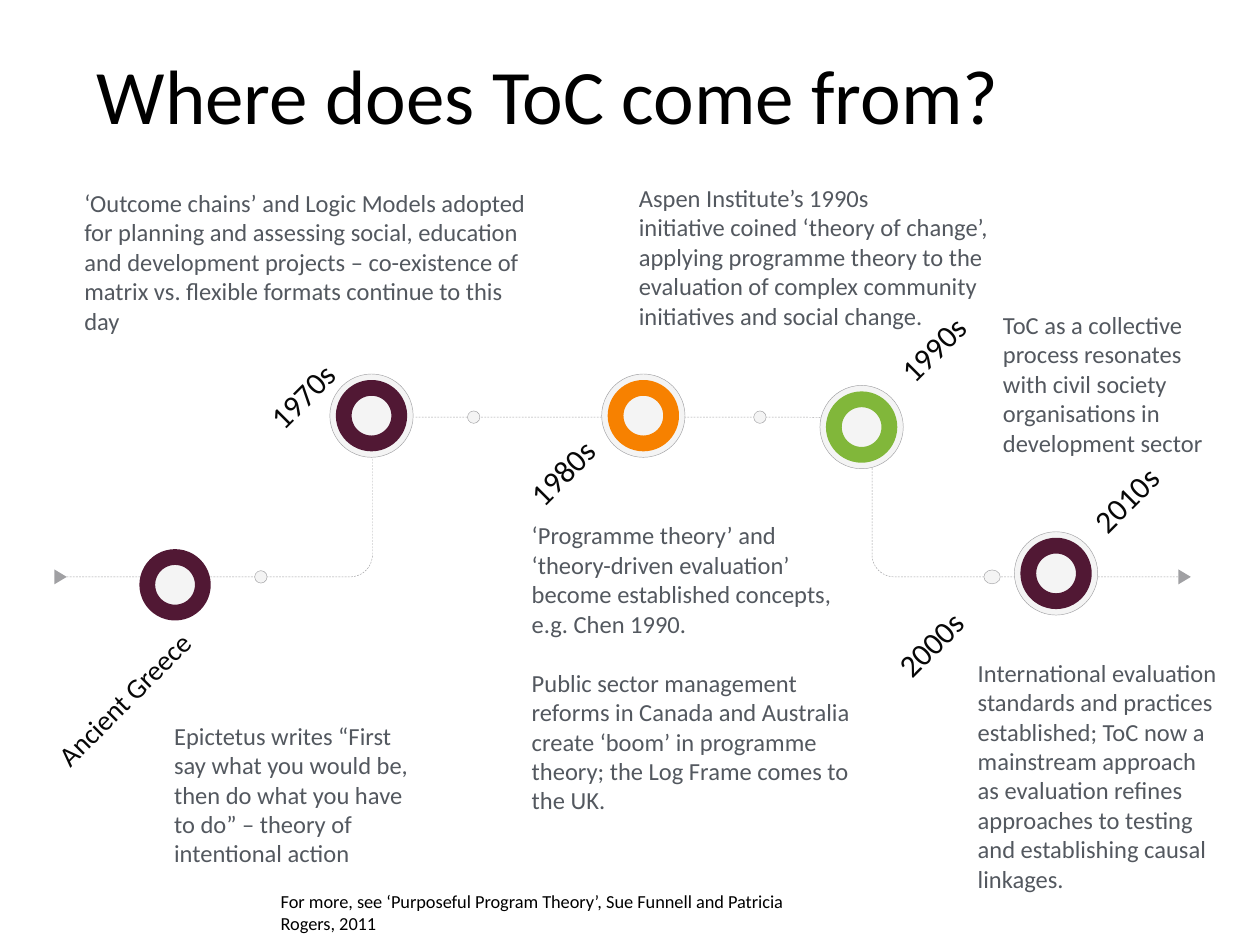
from dataclasses import dataclass
from math import cos, pi, sin
from typing import NamedTuple, Optional

from pptx import Presentation
from pptx.dml.color import RGBColor
from pptx.enum.dml import MSO_LINE
from pptx.enum.shapes import MSO_SHAPE
from pptx.enum.text import MSO_ANCHOR, MSO_AUTO_SIZE, PP_ALIGN
from pptx.util import Cm, Pt


@dataclass(frozen=True)
class Theme:
    font: str = "Calibri"
    black: str = "000000"
    label: str = "070707"
    body: str = "53585F"
    line: str = "A0A0A3"
    pale: str = "F4F4F4"
    plum: str = "511834"
    orange: str = "F78100"
    green: str = "81B73A"
    title_size: float = 44
    label_size: float = 18
    small_label_size: float = 16
    body_size: float = 14
    source_size: float = 10.5
    hairline: float = 0.25
    ring_width: float = 9


T = Theme()


# All positions and sizes below are in centimetres.
class Node(NamedTuple):
    cx: float
    cy: float
    color: str
    halo: bool = True


class Label(NamedTuple):
    text: str
    x: float
    y: float
    w: float
    h: float = 1.14
    size: float = T.label_size


class Note(NamedTuple):
    x: float
    y: float
    w: float
    h: float
    paragraphs: tuple
    gap: float = 0


class Bend(NamedTuple):
    start: tuple
    corner: tuple
    end: tuple
    rx: float
    ry: float


HALO, RING, DOT = 1.68, 1.12, 0.25
TOP_Y, BASE_Y = 8.41, 11.63
LEFT_X, RIGHT_X = 7.51, 17.58

BENDS = [
    Bend((RIGHT_X, 9.42), (RIGHT_X, TOP_Y), (8.36, TOP_Y), 1.43, 0.3),
    Bend((RIGHT_X, 9.25), (RIGHT_X, BASE_Y), (23.9, BASE_Y), 0.45, 0.45),
    Bend((LEFT_X, 9.25), (LEFT_X, BASE_Y), (1.19, BASE_Y), 0.45, 0.45),
]
ARROW_XS = [1.22, 23.88]
DOTS = [(9.55, TOP_Y, DOT, DOT), (15.32, TOP_Y, DOT, DOT),
        (5.26, BASE_Y, DOT, DOT), (20, BASE_Y, 0.33, 0.28)]
NODES = [
    Node(7.49, 8.38, T.plum),
    Node(12.97, 8.38, T.orange),
    Node(17.37, 8.61, T.green),
    Node(3.53, 11.79, T.plum, halo=False),
    Node(21.29, 11.56, T.plum),
]
LABELS = [
    Label("Ancient Greece", 0.33, 13.67, 4.14, 1.04, T.small_label_size),
    Label("1970s", 4.85, 7.54, 2.24),
    Label("1980s", 9.75, 9.22, 2.64),
    Label("1990s", 17.55, 6.6, 2.26),
    Label("2000s", 17.5, 12.55, 2.26),
    Label("2010s", 21.44, 9.63, 2.26),
]
NOTES = [
    Note(1.57, 3.66, 9.37, 3.25, (
        "‘Outcome chains’ and Logic Models adopted for planning and assessing social, "
        "education and development projects – co-existence of matrix vs. flexible "
        "formats continue to this day",)),
    Note(12.75, 3.56, 7.42, 3.25, (
        "Aspen Institute’s 1990s",
        "initiative coined ‘theory of change’, applying programme theory to the "
        "evaluation of complex community initiatives and social change.")),
    Note(3.38, 14.4, 5.26, 3.25, (
        "Epictetus writes “First say what you would be, then do what you have to do” "
        "– theory of intentional action",)),
    Note(10.59, 10.36, 6.78, 6.25, (
        "‘Programme theory’ and ‘theory-driven evaluation’ become established "
        "concepts, e.g. Chen 1990.",
        "Public sector management reforms in Canada and Australia create ‘boom’ in "
        "programme theory; the Log Frame comes to the UK."), gap=17),
    Note(19.58, 13.13, 5.21, 5.64, (
        "International evaluation standards and practices established; ToC now a "
        "mainstream approach as evaluation refines approaches to testing and "
        "establishing causal linkages.",)),
    Note(20.09, 6.12, 4.45, 3.25, (
        "ToC as a collective process resonates with civil society organisations in "
        "development sector",)),
]


def rgb(color: str) -> RGBColor:
    return RGBColor.from_string(color)


def add_text(s, x: float, y: float, w: float, h: float, *paragraphs: str,
             size: float, color: str, inset: tuple = (0.13, 0.13), rotation: float = 0,
             align=PP_ALIGN.LEFT, anchor=MSO_ANCHOR.TOP, grow: bool = True,
             spacing: Optional[float] = None, gap: float = 0) -> None:
    sp = s.shapes.add_textbox(Cm(x), Cm(y), Cm(w), Cm(h))
    sp.rotation = rotation
    tf = sp.text_frame
    tf.word_wrap = True
    tf.auto_size = MSO_AUTO_SIZE.SHAPE_TO_FIT_TEXT if grow else MSO_AUTO_SIZE.NONE
    tf.vertical_anchor = anchor
    tf.margin_left = tf.margin_right = Cm(inset[0])
    tf.margin_top = tf.margin_bottom = Cm(inset[1])
    for i, text in enumerate(paragraphs):
        p = tf.paragraphs[0] if i == 0 else tf.add_paragraph()
        p.alignment = align
        if spacing:
            p.line_spacing = spacing
        if i and gap:
            p.space_before = Pt(gap)
        r = p.add_run()
        r.text = text
        r.font.name, r.font.size = T.font, Pt(size)
        r.font.color.rgb = rgb(color)


def add_centred(s, kind, cx: float, cy: float, w: float, h: float, fill: str,
                line: Optional[str] = None, width: float = T.hairline):
    sp = s.shapes.add_shape(kind, Cm(cx - w / 2), Cm(cy - h / 2), Cm(w), Cm(h))
    sp.shadow.inherit = False
    sp.fill.solid()
    sp.fill.fore_color.rgb = rgb(fill)
    if line:
        sp.line.color.rgb = rgb(line)
        sp.line.width = Pt(width)
    else:
        sp.line.fill.background()
    return sp


def add_bend(s, b: Bend, steps: int = 12) -> None:
    """Vertical run, rounded corner, horizontal run."""
    (cx, cy), side = b.corner, 1 if b.end[0] > b.corner[0] else -1
    up = 1 if b.start[1] > cy else -1
    angles = [pi / 2 * i / steps for i in range(steps + 1)]
    arc = [(cx + side * b.rx * (1 - cos(a)), cy + up * b.ry * (1 - sin(a))) for a in angles]
    points = [(Cm(x), Cm(y)) for x, y in [b.start, *arc, b.end]]
    builder = s.shapes.build_freeform(*points[0])
    builder.add_line_segments(points[1:], close=False)
    sp = builder.convert_to_shape()
    sp.shadow.inherit = False
    sp.fill.background()
    sp.line.color.rgb = rgb(T.line)
    sp.line.width = Pt(T.hairline)
    sp.line.dash_style = MSO_LINE.DASH


def add_node(s, n: Node) -> None:
    if n.halo:
        add_centred(s, MSO_SHAPE.OVAL, n.cx, n.cy, HALO, HALO, T.pale, T.line)
    add_centred(s, MSO_SHAPE.OVAL, n.cx, n.cy, RING, RING, T.pale, n.color, T.ring_width)


def main() -> None:
    prs = Presentation()
    prs.slide_width, prs.slide_height = Cm(25.4), Cm(19.05)
    s = prs.slides.add_slide(prs.slide_layouts[6])

    # Title
    add_text(s, 1.7, 0.64, 22.66, 2.74, "Where does ToC come from?", size=T.title_size,
             color=T.black, inset=(0.25, 0.13), anchor=MSO_ANCHOR.MIDDLE, grow=False,
             spacing=0.9)

    # Timeline track
    for bend in BENDS:
        add_bend(s, bend)
    for x in ARROW_XS:
        add_centred(s, MSO_SHAPE.ISOSCELES_TRIANGLE, x, BASE_Y, 0.3, 0.25, T.line).rotation = 90
    for dot in DOTS:
        add_centred(s, MSO_SHAPE.OVAL, *dot, T.pale, T.line)
    for node in NODES:
        add_node(s, node)

    # Dates and notes
    for b in LABELS:
        add_text(s, b.x, b.y, b.w, b.h, b.text, size=b.size, color=T.label,
                 inset=(0.18, 0.18), rotation=315, align=PP_ALIGN.RIGHT)
    for n in NOTES:
        add_text(s, n.x, n.y, n.w, n.h, *n.paragraphs, size=T.body_size, color=T.body,
                 gap=n.gap)

    # Source
    add_text(s, 5.41, 17.81, 11.43, 1.19,
             "For more, see ‘Purposeful Program Theory’, Sue Funnell and Patricia Rogers, 2011",
             size=T.source_size, color=T.black, inset=(0.25, 0.13))

    prs.save("out.pptx")


if __name__ == "__main__":
    main()
